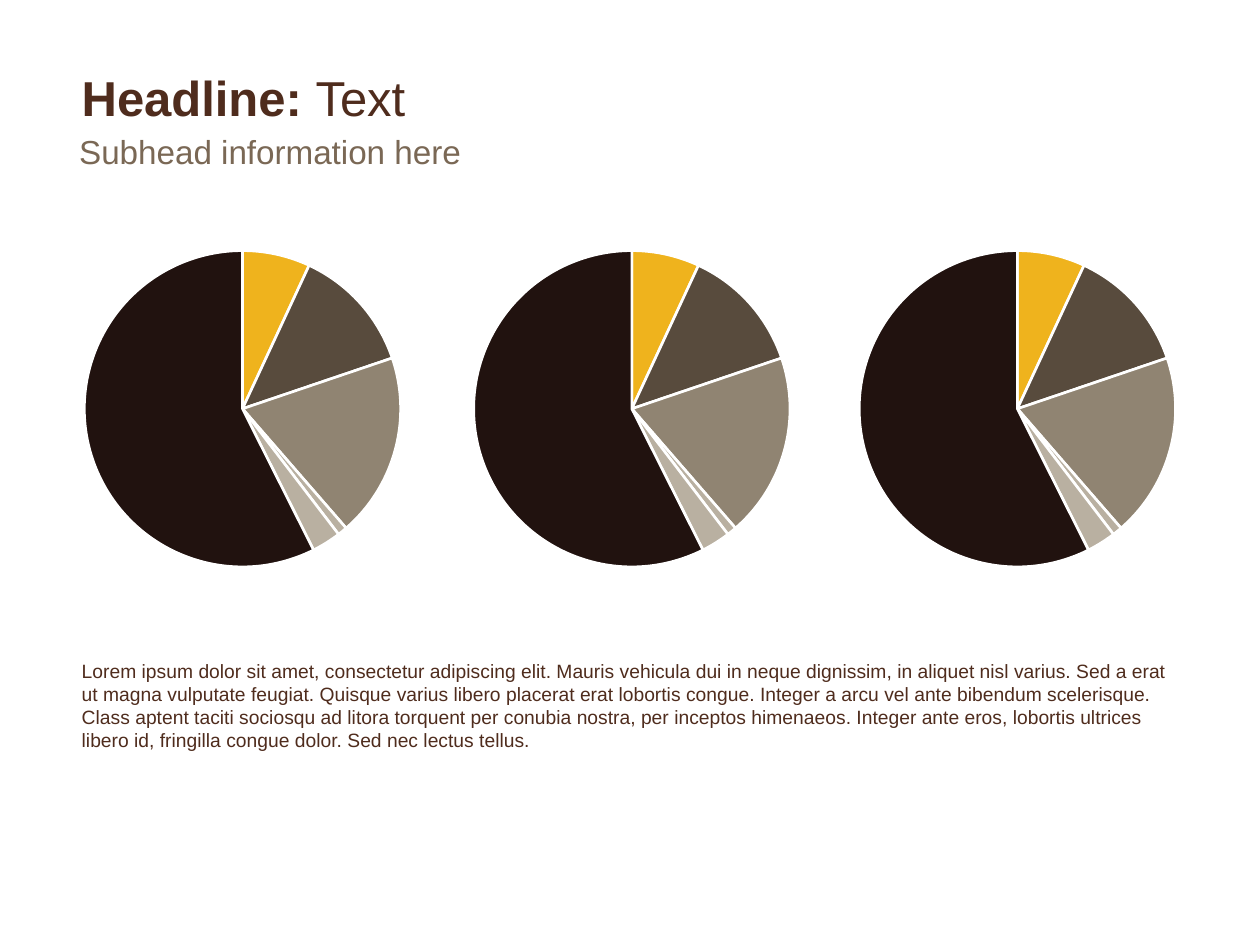
from typing import NamedTuple

from lxml import etree
from pptx import Presentation
from pptx.chart.data import CategoryChartData
from pptx.dml.color import RGBColor
from pptx.enum.chart import XL_CHART_TYPE as ChartType
from pptx.enum.text import MSO_ANCHOR as Anchor
from pptx.oxml.ns import qn
from pptx.util import Inches, Pt

BROWN = RGBColor(0x4F, 0x2C, 0x1D)
TAUPE = RGBColor(0x7A, 0x68, 0x55)
WHITE = RGBColor(0xFF, 0xFF, 0xFF)
BLACK = RGBColor(0x00, 0x00, 0x00)
GOLD = RGBColor(0xEF, 0xB3, 0x1D)
UMBER = RGBColor(0x58, 0x4B, 0x3D)
STONE = RGBColor(0x90, 0x84, 0x72)
SAND = RGBColor(0xB9, 0xB0, 0xA1)
ESPRESSO = RGBColor(0x21, 0x12, 0x0F)


class Run(NamedTuple):
    text: str
    bold: bool = False


class TextBlock(NamedTuple):
    left: float
    top: float
    width: float
    height: float
    runs: list[Run]
    size: float
    color: RGBColor
    anchor: Anchor = Anchor.MIDDLE
    bottom_inset: float = 0.05


class Slice(NamedTuple):
    value: int
    color: RGBColor


LOREM = (
    "Lorem ipsum dolor sit amet, consectetur adipiscing elit. Mauris vehicula dui "
    "in neque dignissim, in aliquet nisl varius. Sed a erat ut magna vulputate "
    "feugiat. Quisque varius libero placerat erat lobortis congue. Integer a arcu "
    "vel ante bibendum scelerisque. Class aptent taciti sociosqu ad litora torquent "
    "per conubia nostra, per inceptos himenaeos. Integer ante eros, lobortis "
    "ultrices libero id, fringilla congue dolor. Sed nec lectus tellus."
)
TEXT_BLOCKS = [
    TextBlock(0.55, 0.14, 8.45, 1.25, [Run("Headline: ", True), Run("Text")], 28, BROWN),
    TextBlock(0.53, 0.99, 3.52, 0.42, [Run("Subhead information here")], 19, TAUPE,
              Anchor.TOP),
    TextBlock(0.55, 5.01, 8.92, 1.37, [Run(LOREM)], 11, BROWN, bottom_inset=0.24),
]
SLICES = [Slice(7, GOLD), Slice(13, UMBER), Slice(19, STONE),
          Slice(1, SAND), Slice(3, SAND), Slice(58, ESPRESSO)]
PIE_LEFTS = [0.53, 3.62, 6.68]
PIE_TOP, PIE_WIDTH, PIE_HEIGHT = 1.84, 2.79, 2.81
PLOT_LAYOUT = {"x": 0.05, "y": 0.05, "w": 0.9, "h": 0.9}


def add_text(slide, block: TextBlock) -> None:
    box = slide.shapes.add_textbox(Inches(block.left), Inches(block.top),
                                   Inches(block.width), Inches(block.height))
    frame = box.text_frame
    frame.word_wrap = True
    frame.vertical_anchor = block.anchor
    frame.margin_bottom = Inches(block.bottom_inset)
    for part in block.runs:
        run = frame.paragraphs[0].add_run()
        run.text = part.text
        run.font.name = "Arial"
        run.font.size = Pt(block.size)
        run.font.bold = part.bold
        run.font.color.rgb = block.color


def set_plot_layout(chart) -> None:
    """Fix the inner plot area as fractions of the chart."""
    plot_area = chart._chartSpace.chart.plotArea
    for old in plot_area.findall(qn("c:layout")):
        plot_area.remove(old)
    layout = etree.Element(qn("c:layout"))
    manual = etree.SubElement(layout, qn("c:manualLayout"))
    settings = {"layoutTarget": "inner", "xMode": "edge", "yMode": "edge", **PLOT_LAYOUT}
    for tag, value in settings.items():
        etree.SubElement(manual, qn(f"c:{tag}")).set("val", str(value))
    plot_area.insert(0, layout)


def add_pie(slide, left: float) -> None:
    pie_data = CategoryChartData()
    pie_data.categories = [str(number) for number in range(1, len(SLICES) + 1)]
    pie_data.add_series("Series 1", [part.value for part in SLICES])
    chart = slide.shapes.add_chart(ChartType.PIE, Inches(left), Inches(PIE_TOP),
                                   Inches(PIE_WIDTH), Inches(PIE_HEIGHT), pie_data).chart
    chart.has_title = False
    chart.has_legend = False
    chart.font.name = "Calibri"
    chart.font.size = Pt(12)
    chart.font.color.rgb = BLACK
    plot = chart.plots[0]
    plot.vary_by_categories = True
    for index, part in enumerate(SLICES):
        wedge = plot.series[0].points[index].format
        wedge.fill.solid()
        wedge.fill.fore_color.rgb = part.color
        wedge.line.color.rgb = WHITE
        wedge.line.width = Pt(1.5)
    set_plot_layout(chart)


def main() -> None:
    presentation = Presentation()
    presentation.slide_width = Inches(10)
    presentation.slide_height = Inches(7.5)
    slide = presentation.slides.add_slide(presentation.slide_layouts[6])

    # Headline, subhead and body text
    for block in TEXT_BLOCKS:
        add_text(slide, block)

    # Row of pies
    for left in PIE_LEFTS:
        add_pie(slide, left)

    presentation.save("out.pptx")


if __name__ == "__main__":
    main()
